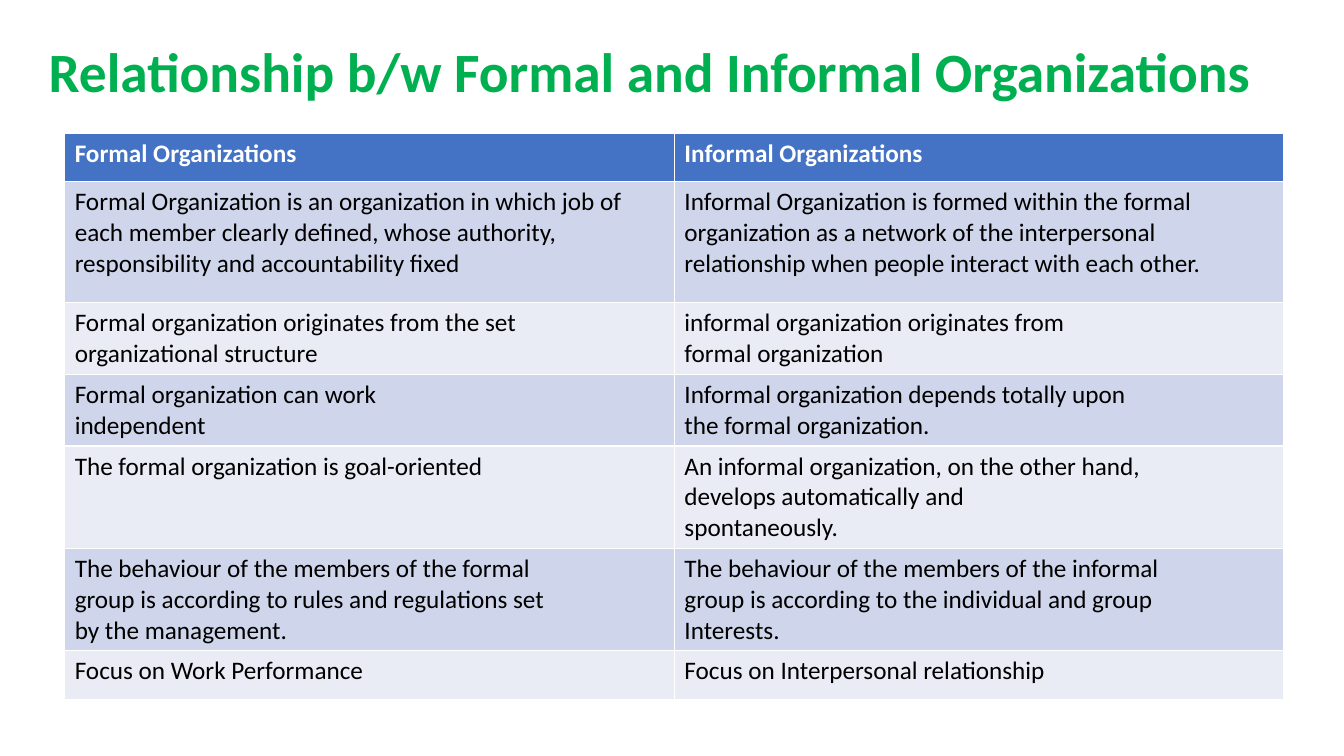
from pptx import Presentation
from pptx.dml.color import RGBColor
from pptx.enum.text import MSO_ANCHOR, MSO_AUTO_SIZE, PP_ALIGN
from pptx.util import Cm, Pt

LEFT = PP_ALIGN.LEFT
MIDDLE = MSO_ANCHOR.MIDDLE
NO_AUTOFIT = MSO_AUTO_SIZE.NONE

FONT = "Calibri"
TITLE_ONLY = 5
COLOURS = {
    "title": "00B050",
    "header": "4472C4",
    "header text": "FFFFFF",
    "odd row": "CFD5EA",
    "even row": "E9EBF5",
    "body text": "000000",
}

TITLE = "Relationship b/w Formal and Informal Organizations"
COMPARISON = [
    ("Formal Organizations", "Informal Organizations"),
    ("Formal Organization is an organization in which job of each member "
     "clearly defined, whose authority, responsibility and accountability fixed",
     "Informal Organization is formed within the formal organization as a "
     "network of the interpersonal relationship when people interact with each other."),
    ("Formal organization originates from the set\norganizational structure",
     "informal organization originates from\nformal organization"),
    ("Formal organization can work\nindependent",
     "Informal organization depends totally upon\nthe formal organization."),
    ("The formal organization is goal-oriented",
     "An informal organization, on the other hand,\n"
     "develops automatically and\nspontaneously."),
    ("The behaviour of the members of the formal\n"
     "group is according to rules and regulations set\nby the management.",
     "The behaviour of the members of the informal\n"
     "group is according to the individual and group\nInterests."),
    ("Focus on Work Performance", "Focus on Interpersonal relationship"),
]
ROW_HEIGHT = Cm(1.22)
DEFINITION_HEIGHT = Cm(3.05)


def colour(name):
    return RGBColor.from_string(COLOURS[name])


def format_font(paragraph, size, colour_name, bold):
    font = paragraph.font
    font.name = FONT
    font.size = Pt(size)
    font.bold = bold
    font.color.rgb = colour(colour_name)


def place_title(slide, left, top, width, height):
    title = slide.shapes.title
    title.left, title.top, title.width, title.height = left, top, width, height
    frame = title.text_frame
    frame.text = TITLE
    frame.word_wrap = True
    frame.auto_size = NO_AUTOFIT
    frame.vertical_anchor = MIDDLE
    heading = frame.paragraphs[0]
    heading.alignment = LEFT
    heading.line_spacing = 0.9
    format_font(heading, 39.6, "title", True)


def fill_cell(cell, text, fill_name, text_name, bold):
    cell.fill.solid()
    cell.fill.fore_color.rgb = colour(fill_name)
    cell.text_frame.text = text
    for paragraph in cell.text_frame.paragraphs:
        format_font(paragraph, 18, text_name, bold)


def place_comparison(slide, left, top, width):
    row_count = len(COMPARISON)
    height = ROW_HEIGHT * (row_count - 1) + DEFINITION_HEIGHT
    table = slide.shapes.add_table(row_count, 2, left, top, width, height).table
    for row_number, texts in enumerate(COMPARISON):
        is_header = row_number == 0
        table.rows[row_number].height = DEFINITION_HEIGHT if row_number == 1 else ROW_HEIGHT
        band = "odd row" if row_number % 2 else "even row"
        for column, text in enumerate(texts):
            fill_cell(table.cell(row_number, column), text,
                      "header" if is_header else band,
                      "header text" if is_header else "body text", is_header)


def main():
    presentation = Presentation()
    presentation.slide_width = Cm(33.87)
    presentation.slide_height = Cm(19.05)
    slide = presentation.slides.add_slide(presentation.slide_layouts[TITLE_ONLY])
    place_title(slide, Cm(0.97), Cm(1.02), Cm(31.72), Cm(1.73))
    place_comparison(slide, Cm(1.63), Cm(3.36), Cm(30.73))
    presentation.save("out.pptx")


if __name__ == "__main__":
    main()
